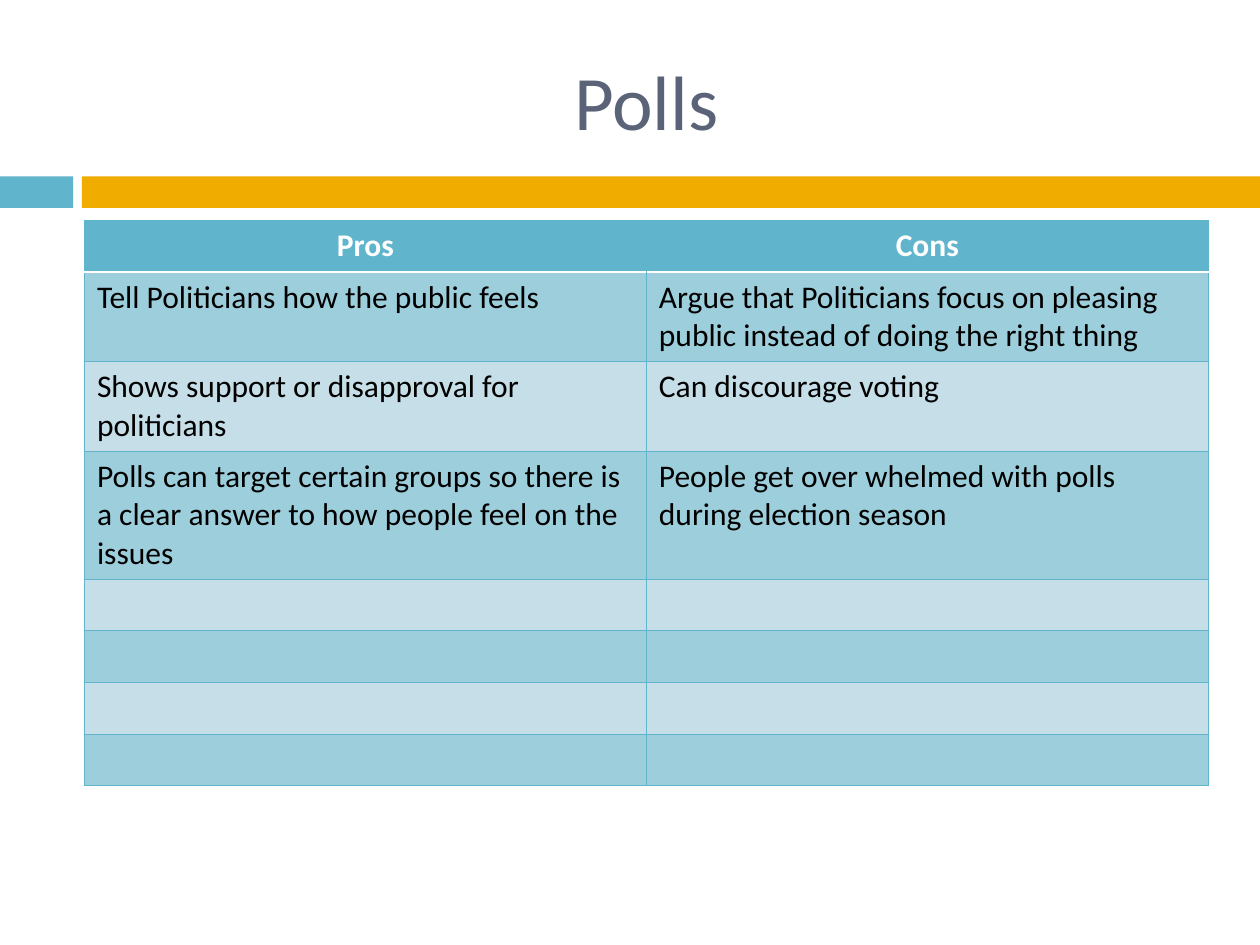
from lxml import etree
from pptx import Presentation
from pptx import util as u
from pptx.dml.color import RGBColor
from pptx.enum import shapes, text
from pptx.oxml import ns

ROWS = [
    ("Pros", "Cons"),
    ("Tell Politicians how the public feels",
     "Argue that Politicians focus on pleasing public instead of doing the right thing"),
    ("Shows support or disapproval for politicians", "Can discourage voting"),
    ("Polls can target certain groups so there is a clear answer to how people feel on the issues",
     "People get over whelmed with polls during election season"),
] + [("", "")] * 4


class Deck:
    """Style and current slide, with a method for each kind of element."""

    hues = {"teal": "60B5CC", "gold": "F0AD00", "slate": "5A6378", "band": "9DCEDC",
            "pale": "C6DEE7", "white": "FFFFFF", "black": "000000"}
    face = "Calibri"

    def __init__(self):
        self.prs = Presentation()
        self.prs.slide_width, self.prs.slide_height = u.Inches(10), u.Inches(7.5)
        self.slide = self.prs.slides.add_slide(self.prs.slide_layouts[5])

    def hue(self, name):
        return RGBColor.from_string(self.hues[name])

    def font(self, font, size, name, bold=False):
        font.name, font.size, font.bold = self.face, u.Pt(size), bold
        font.color.rgb = self.hue(name)

    def title(self, words, x, y, w, h):
        box = self.slide.shapes.title
        box.left, box.top, box.width, box.height = map(u.Inches, (x, y, w, h))
        frame = box.text_frame
        frame.text = words
        frame.vertical_anchor = text.MSO_ANCHOR.MIDDLE
        para = frame.paragraphs[0]
        para.alignment = text.PP_ALIGN.CENTER
        self.font(para.runs[0].font, 44, "slate")

    def bar(self, x, y, w, h, name):
        bar = self.slide.shapes.add_shape(
            shapes.MSO_SHAPE.RECTANGLE, *map(u.Inches, (x, y, w, h)))
        bar.shadow.inherit = False
        bar.fill.solid()
        bar.fill.fore_color.rgb = self.hue(name)
        bar.line.fill.background()

    def edge(self, cell, side, name, width):
        props = cell._tc.get_or_add_tcPr()
        line = etree.SubElement(props, ns.qn(f"a:ln{side}"), w=str(u.Pt(width)))
        if name:
            fill = etree.SubElement(line, ns.qn("a:solidFill"))
            etree.SubElement(fill, ns.qn("a:srgbClr"), val=self.hues[name])
        else:
            etree.SubElement(line, ns.qn("a:noFill"))

    def cell(self, cell, words, row, col):
        head = row == 0
        inner = None if head else "teal"
        self.edge(cell, "L", inner if col else "teal", 0.79)
        self.edge(cell, "R", "teal" if col else inner, 0.79)
        self.edge(cell, "T", *(("white", 1.5) if row == 1 else ("teal", 0.79)))
        self.edge(cell, "B", *(("white", 1.5) if head else ("teal", 0.79)))
        cell.fill.solid()
        cell.fill.fore_color.rgb = self.hue("teal" if head else "band" if row % 2 else "pale")
        para = cell.text_frame.paragraphs[0]
        para.text = words
        if head:
            para.alignment = text.PP_ALIGN.CENTER
        for run in para.runs:
            self.font(run.font, 18, "white" if head else "black", head)

    def table(self, rows, x, y, w, high):
        grid = self.slide.shapes.add_table(
            len(rows), len(rows[0]), *map(u.Inches, (x, y, w, high * len(rows)))).table
        for r, row in enumerate(rows):
            grid.rows[r].height = u.Inches(high)
            for c, words in enumerate(row):
                self.cell(grid.cell(r, c), words, r, c)


def main():
    deck = Deck()
    deck.bar(0, 1.4, 0.58, 0.25, "teal")
    deck.bar(0.65, 1.4, 9.35, 0.25, "gold")
    deck.title("Polls", 0.67, 0.25, 8.92, 1.08)
    deck.table(ROWS, 0.67, 1.75, 8.92, 0.41)
    deck.prs.save("out.pptx")


if __name__ == "__main__":
    main()
